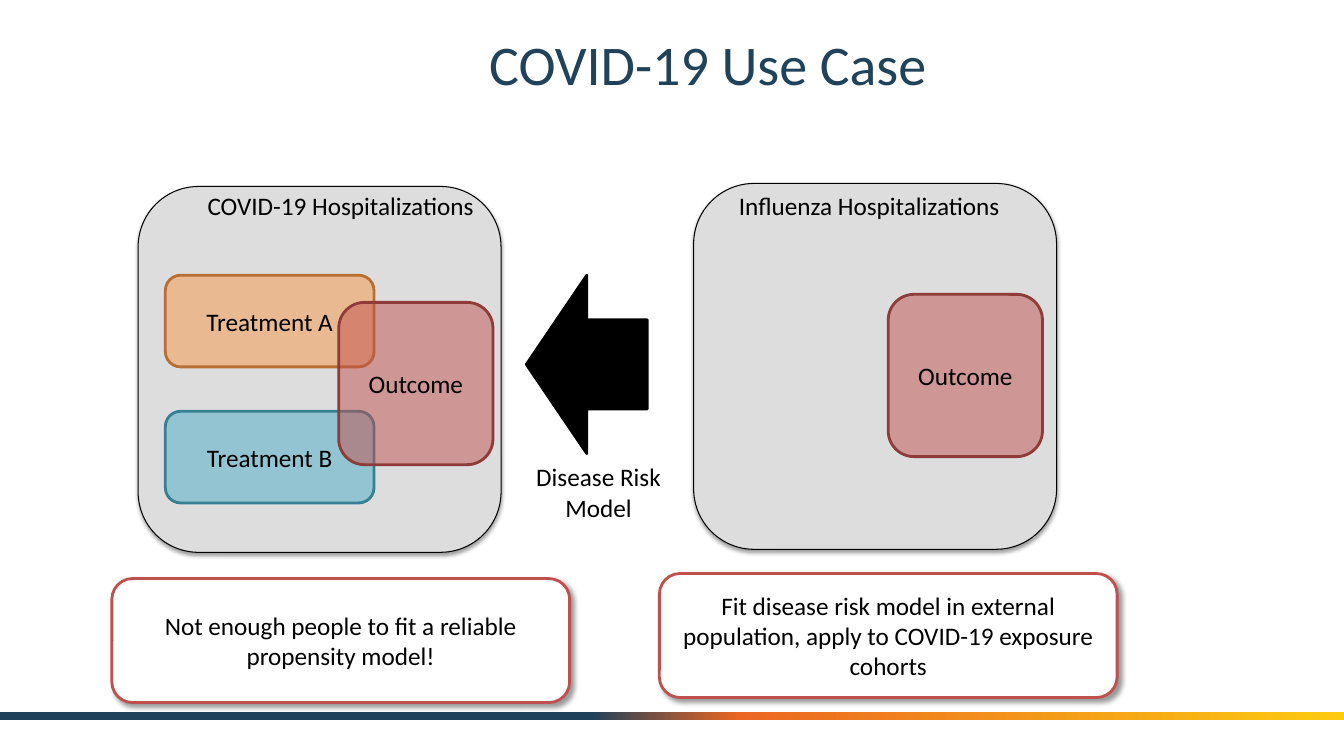
"""Build the COVID-19 use case slide with its two populations."""
import pptx
import pptx.dml.color
import pptx.enum.shapes
import pptx.enum.text
import pptx.oxml
import pptx.oxml.ns
import pptx.util
from lxml import etree

Inches = pptx.util.Inches
SHAPES = pptx.enum.shapes.MSO_SHAPE
ALIGN = pptx.enum.text.PP_ALIGN
MIDDLE = pptx.enum.text.MSO_ANCHOR.MIDDLE
TOP = pptx.enum.text.MSO_ANCHOR.TOP

TITLE = "COVID-19 Use Case"
NAVY, BLACK = "20425A", "000000"
GRADIENT = [(44, NAVY), (55, "EB6622"), (100, "FCCB10")]

STYLES = {
    "population": dict(size=(3.6, 3.63), fill="DDDDDD", line=BLACK, weight=0.75,
                       shadow=(38, 3.1, 1.6, 90)),
    "treatment A": dict(size=(2.07, 0.91), fill="F79646", alpha=49, line="B76F34"),
    "treatment B": dict(size=(2.07, 0.91), fill="4BACC6", alpha=50, line="377F92"),
    "outcome": dict(size=(1.53, 1.61), fill="C0504D", alpha=50, line="8E3B39"),
    "note": dict(size=(4.54, 1.23), fill="FFFFFF", line="C0504D",
                 shadow=(40, 4, 3, 45)),
    "arrow": dict(size=(1.2, 1.77), fill=BLACK, line=BLACK,
                  preset=SHAPES.RIGHT_ARROW, rotation=180),
}
BLOCKS = [
    ("population", 1.37, 1.85, ""),
    ("treatment A", 1.64, 2.73, "Treatment A"),
    ("treatment B", 1.64, 4.08, "Treatment B"),
    ("outcome", 3.36, 3.0, "Outcome"),
    ("note", 1.11, 5.74, "Not enough people to fit a reliable propensity model!"),
    ("population", 6.88, 1.82, ""),
    ("outcome", 8.81, 2.92, "Outcome"),
    ("note", 6.54, 5.69, "Fit disease risk model in external population, "
                         "apply to COVID-19 exposure cohorts"),
    ("arrow", 5.22, 2.73, ""),
]
LABELS = [
    ((1.96, 1.84, 3.99, 0.4), True, [("COVID-19 Hospitalizations", ALIGN.LEFT)]),
    ((7.23, 1.84, 3.99, 0.4), True, [("Influenza Hospitalizations", ALIGN.LEFT)]),
    ((5.22, 4.53, 1.45, 0.71), False,
     [("Disease Risk", ALIGN.LEFT), ("Model", ALIGN.CENTER)]),
]


def color(value):
    return pptx.dml.color.RGBColor.from_string(value)


def add_element(parent, tag, **values):
    element = etree.SubElement(parent, pptx.oxml.ns.qn(tag))
    for name, value in values.items():
        element.set(name, str(value))
    return element


def write(shape, lines, anchor, wrap=True, size=18, ink=BLACK):
    frame = shape.text_frame
    for name, value in dict(word_wrap=wrap, vertical_anchor=anchor).items():
        setattr(frame, name, value)
    for index, (text, align) in enumerate(lines):
        para = frame.add_paragraph() if index else frame.paragraphs[0]
        para.alignment = align
        span = para.add_run()
        span.text = text
        for name, value in dict(name="Calibri", size=pptx.util.Pt(size)).items():
            setattr(span.font, name, value)
        span.font.color.rgb = color(ink)


def add_shadow(shape, alpha, blur, distance, angle):
    effects = shape._element.spPr.find(pptx.oxml.ns.qn("a:effectLst"))
    outer = add_element(effects, "a:outerShdw", blurRad=pptx.util.Pt(blur),
                        dist=pptx.util.Pt(distance), dir=angle * 60000,
                        rotWithShape=0)
    tint = add_element(outer, "a:srgbClr", val=BLACK)
    add_element(tint, "a:alpha", val=alpha * 1000)


def add_block(page, kind, left, top, text):
    style = STYLES[kind]
    shape = page.shapes.add_shape(style.get("preset", SHAPES.ROUNDED_RECTANGLE),
                                  *map(Inches, (left, top, *style["size"])))
    shape.shadow.inherit = False
    shape.rotation = style.get("rotation", 0)
    shape.fill.solid()
    shape.fill.fore_color.rgb = color(style["fill"])
    shape.line.color.rgb = color(style["line"])
    shape.line.width = pptx.util.Pt(style.get("weight", 2))
    if "alpha" in style:
        tint = shape._element.spPr.find(pptx.oxml.ns.qn("a:solidFill"))[0]
        add_element(tint, "a:alpha", val=style["alpha"] * 1000)
    if "shadow" in style:
        add_shadow(shape, *style["shadow"])
    if text:
        write(shape, [(text, ALIGN.CENTER)], MIDDLE)


def add_bar(page):
    bar = page.shapes.add_shape(SHAPES.RECTANGLE,
                                *map(Inches, (0, 7.06, 13.33, 0.08)))
    bar.shadow.inherit = False
    bar.line.fill.background()
    bar.fill.gradient()
    bar.fill.gradient_angle = 0
    stops = bar._element.spPr.find(".//" + pptx.oxml.ns.qn("a:gsLst"))
    for stop in list(stops):
        stops.remove(stop)
    for position, value in GRADIENT:
        stop = add_element(stops, "a:gs", pos=position * 1000)
        add_element(stop, "a:srgbClr", val=value)


def main():
    deck = pptx.Presentation()
    deck.slide_width, deck.slide_height = Inches(13.33), Inches(7.5)
    page = deck.slides.add_slide(deck.slide_layouts[5])
    title = page.shapes.title
    places = dict(left=1.37, top=0.17, width=11.3, height=0.92)
    for name, value in places.items():
        setattr(title, name, Inches(value))
    write(title, [(TITLE, ALIGN.CENTER)], MIDDLE, size=40, ink=NAVY)
    add_bar(page)
    for block in BLOCKS:
        add_block(page, *block)
    for place, wrap, lines in LABELS:
        box = page.shapes.add_textbox(*map(Inches, place))
        write(box, lines, TOP, wrap)
    deck.save("out.pptx")


if __name__ == "__main__":
    main()
